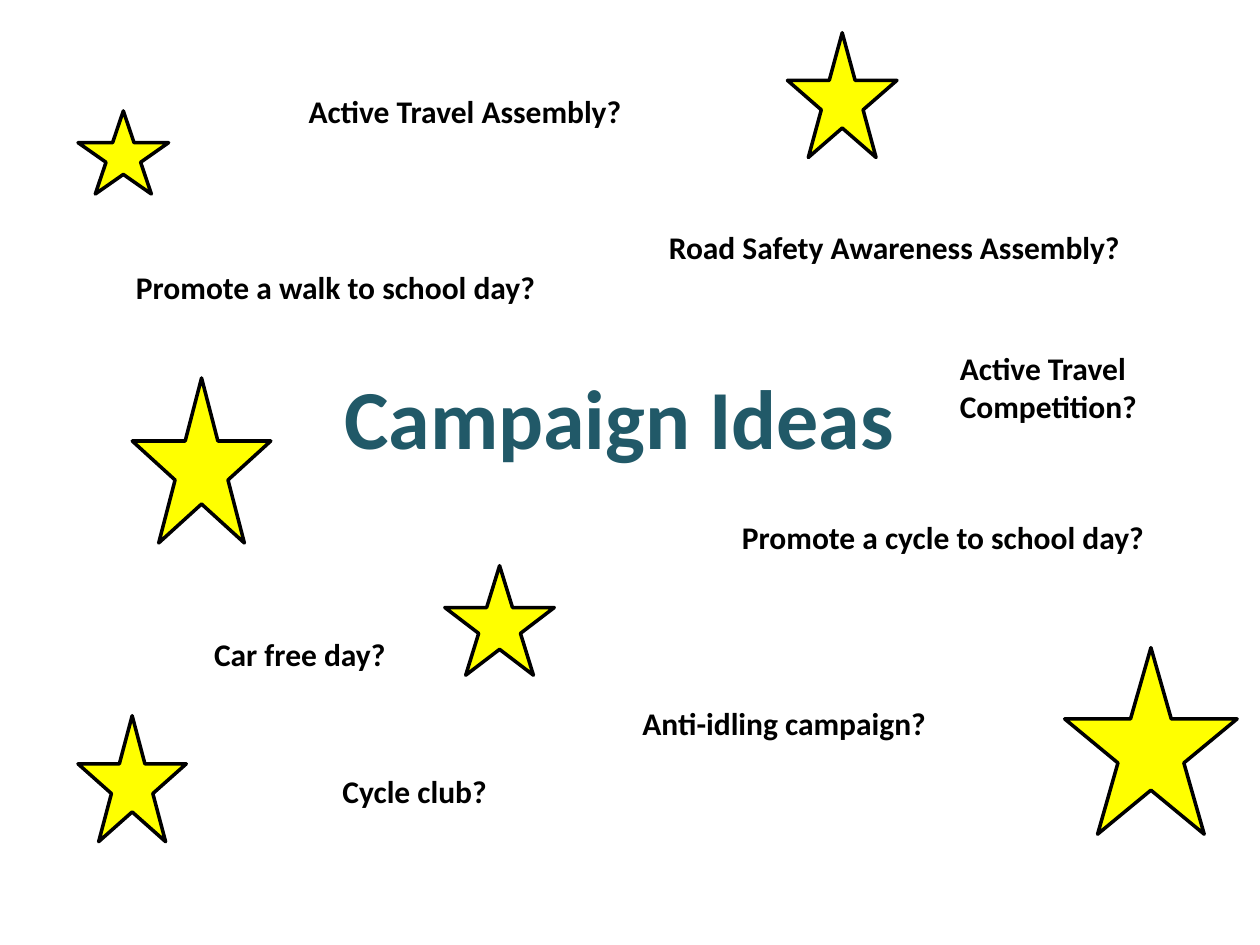
from pptx import Presentation
from pptx.dml.color import RGBColor
from pptx.enum import shapes, text
from pptx.util import Pt

TEAL = RGBColor(0x21, 0x59, 0x68)
BLACK = RGBColor(0, 0, 0)
YELLOW = RGBColor(0xFF, 0xFF, 0)
FONT = "Calibri"

IDEAS = [
    ("Car free day?", (115.2, 359.3, 274.3, 28.8)),
    ("Anti-idling campaign?", (360, 398.9, 252.7, 28.8)),
    ("Promote a walk to school day?", (70.6, 149.8, 283.7, 28.8)),
    ("Promote a cycle to school day?", (416.9, 292.3, 305.3, 28.8)),
    ("Active Travel Assembly?", (169.2, 49, 274.3, 28.8)),
    ("Road Safety Awareness Assembly?", (375.1, 126.7, 274.3, 28.8)),
    ("Active Travel Competition?", (541.4, 195.8, 177.8, 51.1)),
    ("Cycle club?", (188.6, 437.8, 274.3, 28.8)),
]
STARS = [
    (75.6, 216, 79.2, 94.3),
    (450, 18.7, 62.6, 71.3),
    (44.6, 409, 61.9, 72),
    (44.6, 63.4, 51.8, 47.5),
    (254.2, 323.3, 62.6, 62.6),
    (608.4, 370.1, 98.6, 106.6),
]


def add_run(p, words, size, color):
    r = p.add_run()
    r.text = words
    r.font.name = FONT
    r.font.size = Pt(size)
    r.font.bold = True
    r.font.color.rgb = color


def place_title(s, words, box):
    sp = s.shapes.title
    sp.left, sp.top, sp.width, sp.height = map(Pt, box)
    tf = sp.text_frame
    tf.auto_size = text.MSO_AUTO_SIZE.NONE
    tf.vertical_anchor = text.MSO_ANCHOR.MIDDLE
    p = tf.paragraphs[0]
    p.alignment = text.PP_ALIGN.CENTER
    add_run(p, words, 48, TEAL)


def add_idea(s, words, box):
    tf = s.shapes.add_textbox(*map(Pt, box)).text_frame
    tf.word_wrap = True
    tf.auto_size = text.MSO_AUTO_SIZE.SHAPE_TO_FIT_TEXT
    add_run(tf.paragraphs[0], words, 18, BLACK)


def add_star(s, box):
    sp = s.shapes.add_shape(shapes.MSO_SHAPE.STAR_5_POINT, *map(Pt, box))
    sp.shadow.inherit = False
    sp.fill.solid()
    sp.fill.fore_color.rgb = YELLOW
    sp.line.color.rgb = BLACK
    sp.line.width = Pt(2)


def main():
    prs = Presentation()
    prs.slide_width, prs.slide_height = Pt(720), Pt(540)
    s = prs.slides.add_slide(prs.slide_layouts[0])
    subtitle = s.placeholders[1].element
    subtitle.getparent().remove(subtitle)
    place_title(s, "Campaign Ideas", (131, 213.1, 445.7, 49))
    for box in STARS:
        add_star(s, box)
    for words, box in IDEAS:
        add_idea(s, words, box)
    prs.save("out.pptx")


if __name__ == "__main__":
    main()
